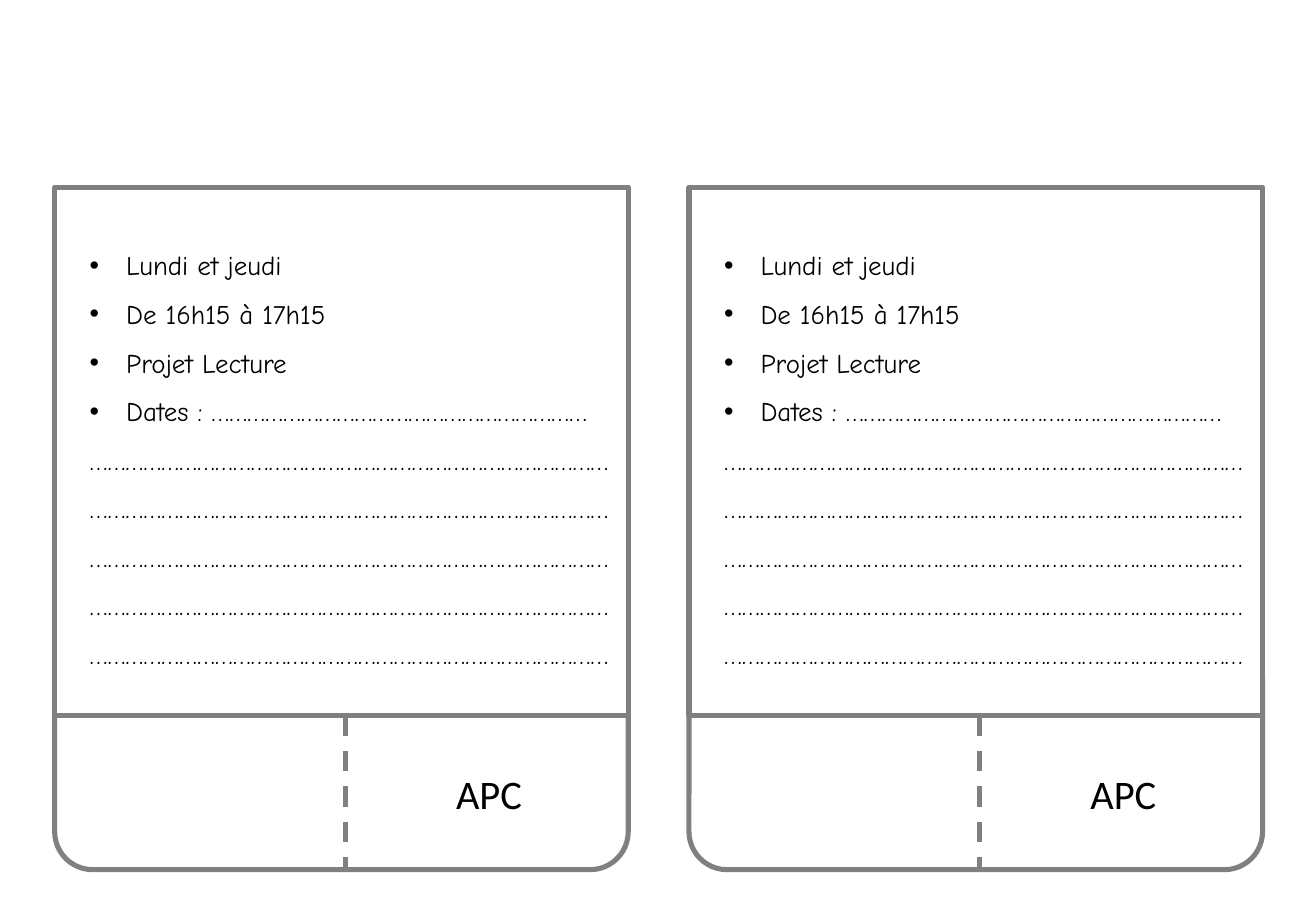
import pptx
import pptx.util
import pptx.dml.color
import pptx.enum.dml
import pptx.enum.shapes
import pptx.enum.text
import pptx.oxml.ns
import lxml.etree

BULLETS = [
    "Lundi et jeudi ",
    "De 16h15 à 17h15",
    "Projet Lecture",
    "Dates : ………………………………………………………",
]
DOTS = "……………………………………………………………………………"
DOT_LINES = 5
LABEL = "APC"
COLORS = {"border": "808080", "paper": "FFFFFF", "text": "000000"}

PX = 9144
SLIDE_W, SLIDE_H = 1083, 750
CARD_LEFTS = [567, 45]
CARD_W = 472
BODY_TOP, BODY_H = 154, 435
TAB_TOP, TAB_H = 528, 188
DIVIDER_DX = 239
LABEL_DX, LABEL_TOP, LABEL_W, LABEL_H = 316, 628, 83, 50
BULLET_INDENT, BULLET_HANG, DOTS_INDENT = 49, 30, 19

SHAPE = pptx.enum.shapes.MSO_SHAPE
ALIGN = pptx.enum.text.PP_ALIGN
ANCHOR = pptx.enum.text.MSO_ANCHOR
qn = pptx.oxml.ns.qn


def rgb(name):
    return pptx.dml.color.RGBColor.from_string(COLORS[name])


def px(*lengths):
    return [pptx.util.Emu(n * PX) for n in lengths]


def write(p, text, size=16, font="Comic Neue", align=ALIGN.JUSTIFY,
          spacing=None, left=0, hang=0):
    p.alignment = align
    if spacing:
        p.line_spacing = spacing
    pPr = p._p.get_or_add_pPr()
    pPr.set("marL", str(left * PX))
    pPr.set("indent", str(-hang * PX))
    if hang:
        lxml.etree.SubElement(pPr, qn("a:buFont")).set("typeface", "Arial")
        lxml.etree.SubElement(pPr, qn("a:buChar")).set("char", "•")
    r = p.add_run()
    r.text = text
    r.font.size = pptx.util.Pt(size)
    r.font.name = font
    r.font.color.rgb = rgb("text")


def border(sp):
    sp.line.color.rgb = rgb("border")
    sp.line.width = pptx.util.Pt(3)


def panel(s, kind, *box):
    sp = s.shapes.add_shape(kind, *px(*box))
    sp.shadow.inherit = False
    sp.fill.solid()
    sp.fill.fore_color.rgb = rgb("paper")
    border(sp)
    return sp


def card(s, left):
    panel(s, SHAPE.ROUNDED_RECTANGLE, left, TAB_TOP, CARD_W, TAB_H)
    tf = panel(s, SHAPE.RECTANGLE, left, BODY_TOP, CARD_W, BODY_H).text_frame
    tf.word_wrap = True
    tf.vertical_anchor = ANCHOR.MIDDLE
    lines = [(t, BULLET_INDENT, BULLET_HANG) for t in BULLETS]
    lines += [(DOTS, DOTS_INDENT, 0)] * DOT_LINES
    for i, (text, indent, hang) in enumerate(lines):
        p = tf.add_paragraph() if i else tf.paragraphs[0]
        write(p, text, spacing=1.5, left=indent, hang=hang)

    x = left + DIVIDER_DX
    divider = s.shapes.add_connector(
        pptx.enum.shapes.MSO_CONNECTOR.STRAIGHT,
        *px(x, BODY_TOP + BODY_H, x, TAB_TOP + TAB_H))
    border(divider)
    divider.line.dash_style = pptx.enum.dml.MSO_LINE.DASH
    lxml.etree.SubElement(divider._element.spPr, qn("a:effectLst"))

    tf = s.shapes.add_textbox(
        *px(left + LABEL_DX, LABEL_TOP, LABEL_W, LABEL_H)).text_frame
    tf.word_wrap = False
    tf.auto_size = pptx.enum.text.MSO_AUTO_SIZE.SHAPE_TO_FIT_TEXT
    write(tf.paragraphs[0], LABEL, size=24, font="Calibri", align=ALIGN.CENTER)


def main():
    prs = pptx.Presentation()
    prs.slide_width, prs.slide_height = px(SLIDE_W, SLIDE_H)
    s = prs.slides.add_slide(prs.slide_layouts[6])
    for left in CARD_LEFTS:
        card(s, left)
    prs.save("out.pptx")


if __name__ == "__main__":
    main()
